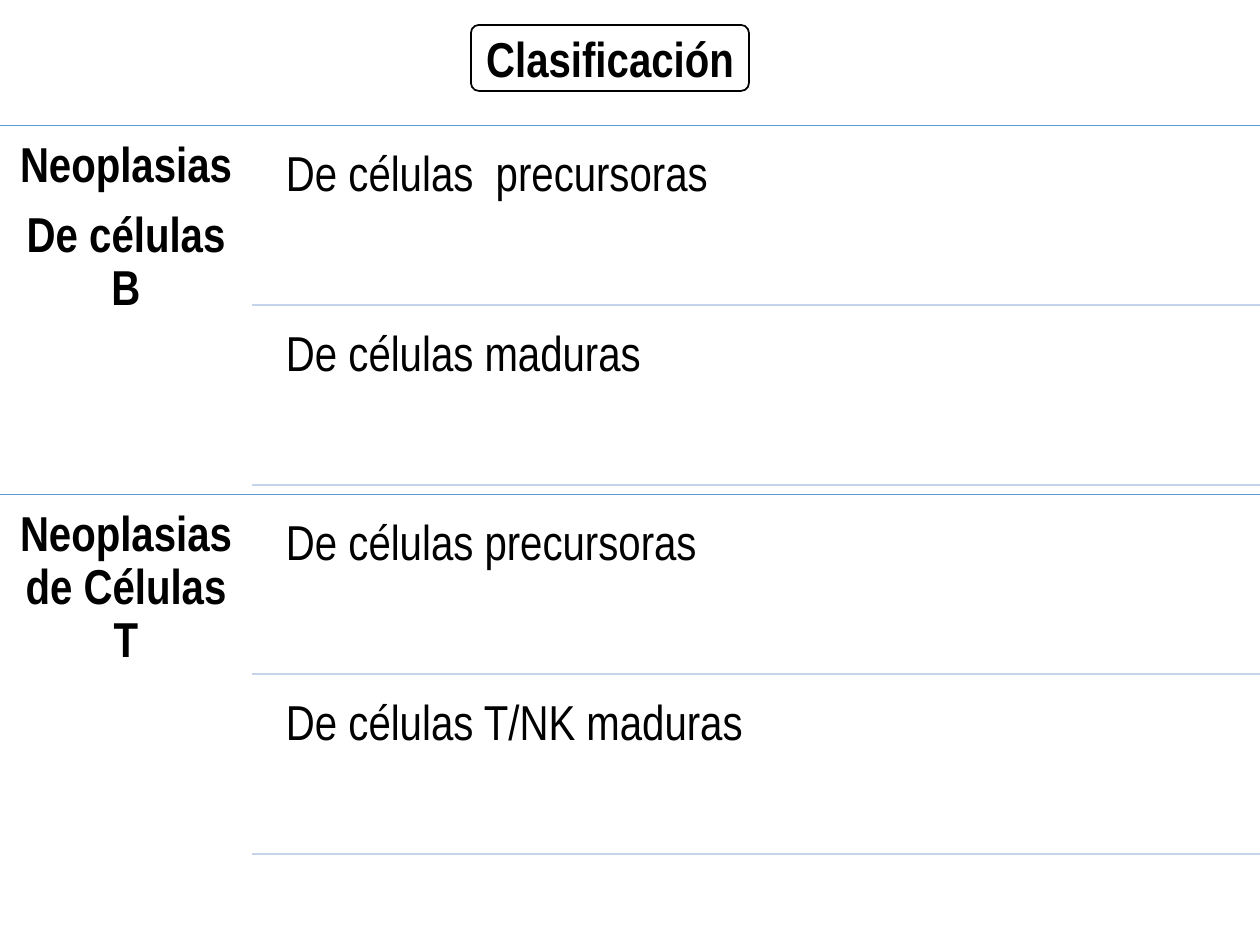
from dataclasses import dataclass

from lxml import etree
from pptx import Presentation
from pptx import util as u
from pptx.dml.color import RGBColor
from pptx.enum import shapes, text
from pptx.oxml import ns

WIDE, HIGH = 1260, 945
LEFT, TOP = 252, 125  # width of the heading column, top of the first group
GROUP, ITEM, GAP = 369, 171, 9
INDENT = 19

GROUPS = [
    (["Neoplasias", "De células B"],
     ["De células  precursoras", "De células maduras"]),
    (["Neoplasias de Células T"],
     ["De células precursoras", "De células T/NK maduras"]),
]


@dataclass(frozen=True)
class Theme:
    font: str = "Arial Narrow"
    size: int = 28
    ink: str = "000000"
    paper: str = "FFFFFF"
    rule: str = "5B9BD5"
    thin: str = "C4D5EB"


THEME = Theme()


def px(n):
    return u.Emu(round(n * 914400 / 126))


def color(code):
    return RGBColor.from_string(code)


def style(para, align, bold):
    para.alignment = align
    font = para.font
    font.name, font.size, font.bold = THEME.font, u.Pt(THEME.size), bold
    font.color.rgb = color(THEME.ink)


def add_rule(slide, left, y, code, width):
    """Draw a level line from left to the right edge of the slide."""
    line = slide.shapes.add_connector(
        shapes.MSO_CONNECTOR.STRAIGHT, px(left), px(y), px(WIDE), px(y))
    line.line.color.rgb = color(code)
    line.line.width = u.Pt(width)
    etree.SubElement(line._element.spPr, ns.qn("a:effectLst"))


def add_label(slide, box, lines, align, bold=False):
    frame = slide.shapes.add_textbox(*map(px, box)).text_frame
    frame.word_wrap = True
    frame.margin_left = frame.margin_right = px(15)
    frame.margin_top = frame.margin_bottom = px(15)
    frame.text = "\n".join(lines)
    for para in frame.paragraphs:
        style(para, align, bold)
        para.line_spacing = 0.9
        para.space_after = u.Pt(10)


def add_group(slide, top, head, items):
    add_rule(slide, 0, top, THEME.rule, 0.5)
    add_label(slide, (0, top, LEFT, GROUP), head, text.PP_ALIGN.CENTER, True)
    left = LEFT + INDENT
    for i, item in enumerate(items):
        y = top + GAP + i * (ITEM + GAP)
        add_label(slide, (left, y, WIDE - left, ITEM), [item],
                  text.PP_ALIGN.JUSTIFY)
        add_rule(slide, LEFT, y + ITEM, THEME.thin, 1)


def add_title(slide, box, words):
    shape = slide.shapes.add_shape(
        shapes.MSO_SHAPE.ROUNDED_RECTANGLE, *map(px, box))
    shape.adjustments[0] = 0.12
    shape.shadow.inherit = False
    shape.fill.solid()
    shape.fill.fore_color.rgb = color(THEME.paper)
    shape.line.color.rgb = color(THEME.ink)
    shape.line.width = u.Pt(1)
    frame = shape.text_frame
    frame.word_wrap = False
    frame.vertical_anchor = text.MSO_ANCHOR.MIDDLE
    frame.text = words
    style(frame.paragraphs[0], text.PP_ALIGN.CENTER, True)


def main():
    deck = Presentation()
    deck.slide_width, deck.slide_height = px(WIDE), px(HIGH)
    slide = deck.slides.add_slide(deck.slide_layouts[6])
    for i, (head, items) in enumerate(GROUPS):
        add_group(slide, TOP + i * GROUP, head, items)
    add_title(slide, (471, 25, 278, 66), "Clasificación")
    deck.save("out.pptx")


if __name__ == "__main__":
    main()
